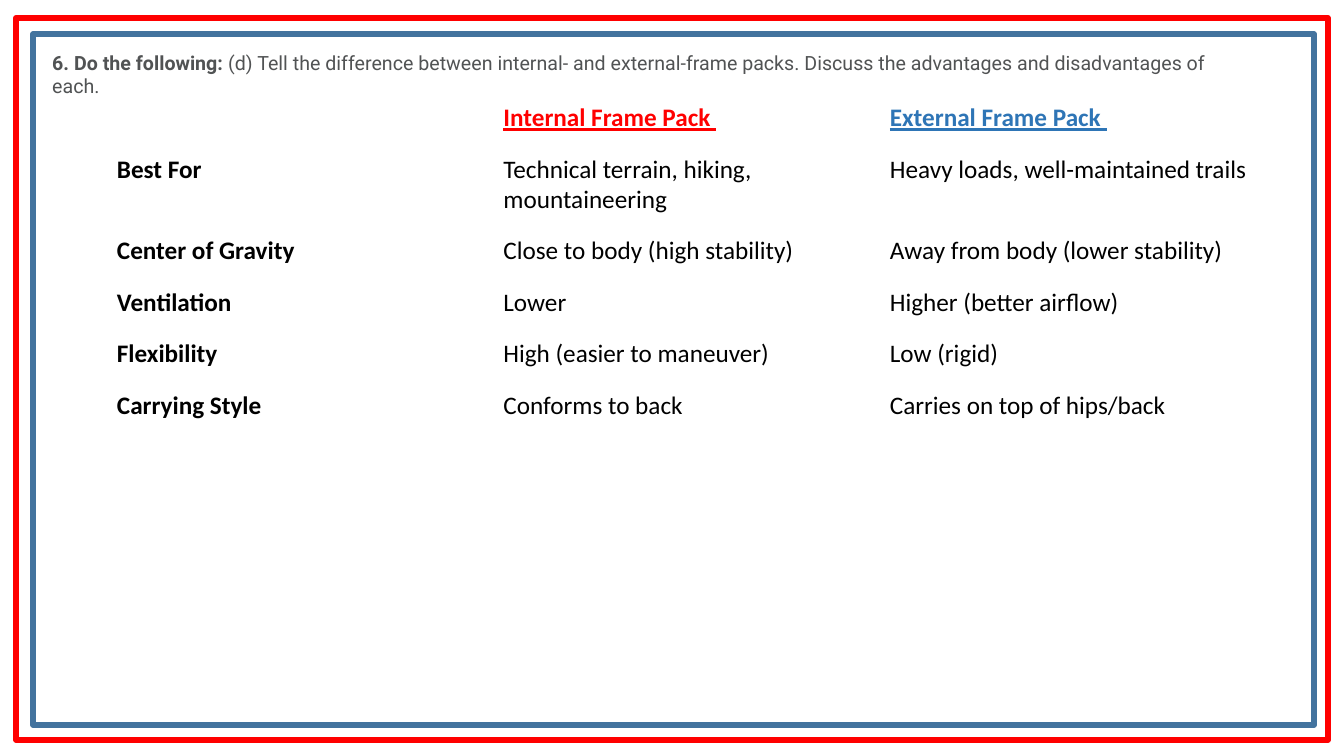
from pptx import Presentation
from pptx.dml.color import RGBColor
from pptx.enum.shapes import MSO_SHAPE
from pptx.enum.text import MSO_ANCHOR
from pptx.util import Inches, Pt

RECT = MSO_SHAPE.RECTANGLE
TOP, BOTTOM = MSO_ANCHOR.TOP, MSO_ANCHOR.BOTTOM
BLANK = 6
COLORS = {"red": "FF0000", "steel": "43739E", "blue": "2E75B6",
          "gray": "515354", "black": "000000", "white": "FFFFFF"}
HEADS = [("Internal Frame Pack ", "red"), ("External Frame Pack ", "blue")]
ROWS = [
    ("Best For", "Technical terrain, hiking, mountaineering",
     "Heavy loads, well-maintained trails"),
    ("Center of Gravity", "Close to body (high stability)",
     "Away from body (lower stability)"),
    ("Ventilation", "Lower", "Higher (better airflow)"),
    ("Flexibility", "High (easier to maneuver)", "Low (rigid)"),
    ("Carrying Style", "Conforms to back", "Carries on top of hips/back"),
]


def color(name):
    """Return the named colour."""
    return RGBColor.from_string(COLORS[name])


def add_run(para, text, font, size, tint, bold=False, under=False):
    """Append one styled run to a paragraph."""
    run = para.add_run()
    run.text = text
    run.font.name = font
    run.font.size = Pt(size)
    run.font.bold = bold
    run.font.underline = under
    run.font.color.rgb = color(tint)


def add_frame(slide, tint, left, top, width, height):
    """Draw an unfilled border around the slide."""
    frame = slide.shapes.add_shape(
        RECT, Inches(left), Inches(top), Inches(width), Inches(height))
    frame.shadow.inherit = False
    frame.fill.background()
    frame.line.color.rgb = color(tint)
    frame.line.width = Pt(4.5)


def add_task(slide):
    """Add the task text above the table."""
    box = slide.shapes.add_textbox(
        Inches(0.42), Inches(0.21), Inches(12.14), Inches(0.81))
    frame = box.text_frame
    frame.word_wrap = True
    frame.vertical_anchor = BOTTOM
    para = frame.paragraphs[0]
    add_run(para, "6.\u00a0Do the following: ", "Roboto", 14, "gray", bold=True)
    add_run(para, "(d) Tell the difference between internal- and external-frame "
            "packs. Discuss the advantages and disadvantages of each.",
            "Roboto", 14, "gray")


def fill_cell(cell, text="", tint="black", bold=False, under=False):
    """Set the fill, margins and text of a cell."""
    cell.fill.solid()
    cell.fill.fore_color.rgb = color("white")
    cell.vertical_anchor = TOP
    cell.margin_left = cell.margin_right = Inches(0.1)
    cell.margin_top = cell.margin_bottom = Inches(0.1)
    if text:
        add_run(cell.text_frame.paragraphs[0], text, "Calibri", 18,
                tint, bold, under)


def add_packs(slide):
    """Add the table that compares the two packs."""
    table = slide.shapes.add_table(
        len(ROWS) + 1, 3, Inches(1.06), Inches(0.92),
        Inches(11.5), Inches(3.35)).table
    for row in table.rows:
        row.height = Inches(0.51)
    table.rows[1].height = Inches(0.81)
    fill_cell(table.cell(0, 0))
    for col, (text, tint) in enumerate(HEADS, 1):
        fill_cell(table.cell(0, col), text, tint, bold=True, under=True)
    for num, row in enumerate(ROWS, 1):
        for col, text in enumerate(row):
            fill_cell(table.cell(num, col), text, bold=col == 0)


def main():
    """Build and save the slide."""
    deck = Presentation()
    deck.slide_width = Inches(13.33)
    deck.slide_height = Inches(7.5)
    slide = deck.slides.add_slide(deck.slide_layouts[BLANK])
    add_frame(slide, "red", 0.16, 0.18, 13.01, 7.16)
    add_frame(slide, "steel", 0.33, 0.34, 12.7, 6.85)
    add_task(slide)
    add_packs(slide)
    deck.save("out.pptx")


if __name__ == "__main__":
    main()
